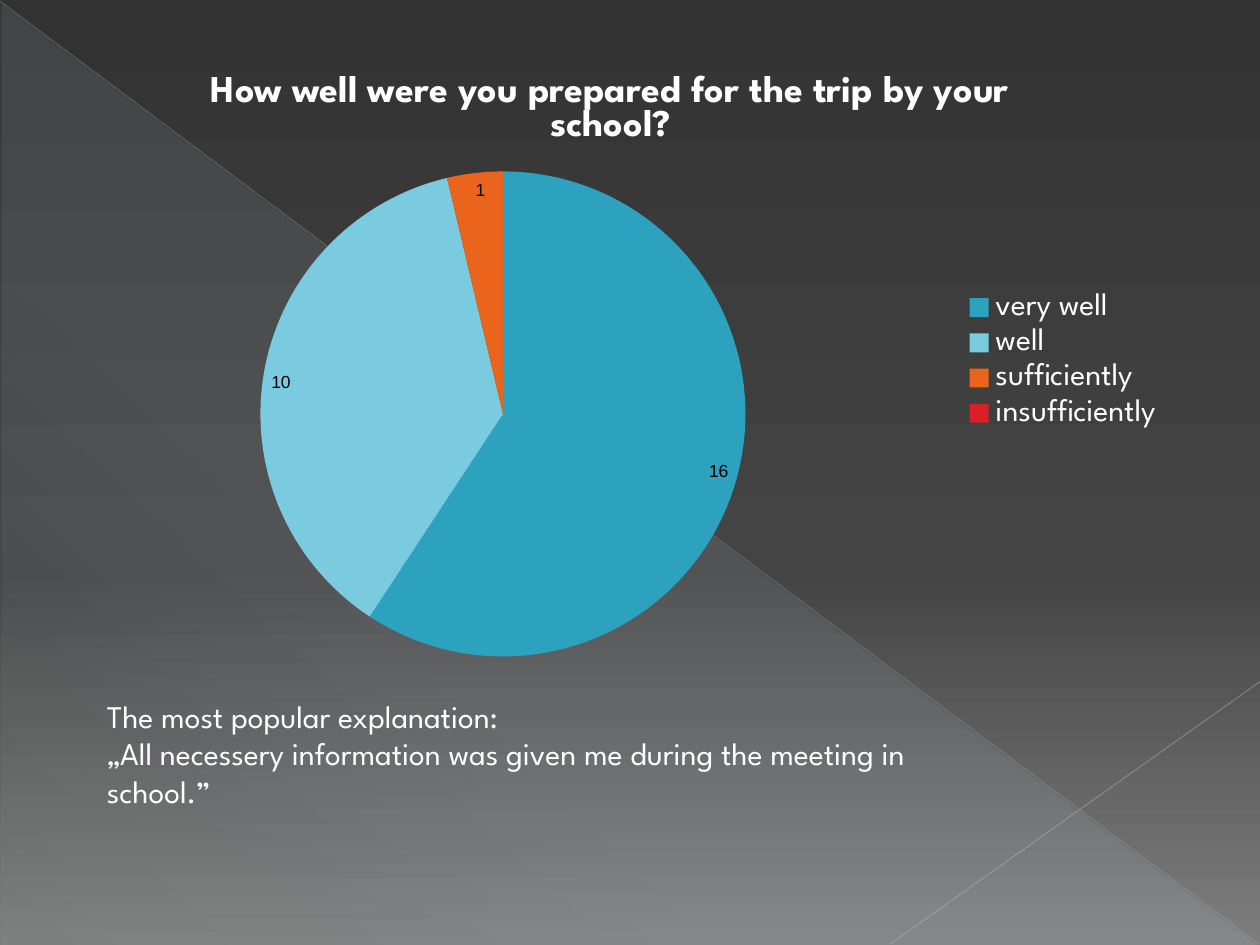
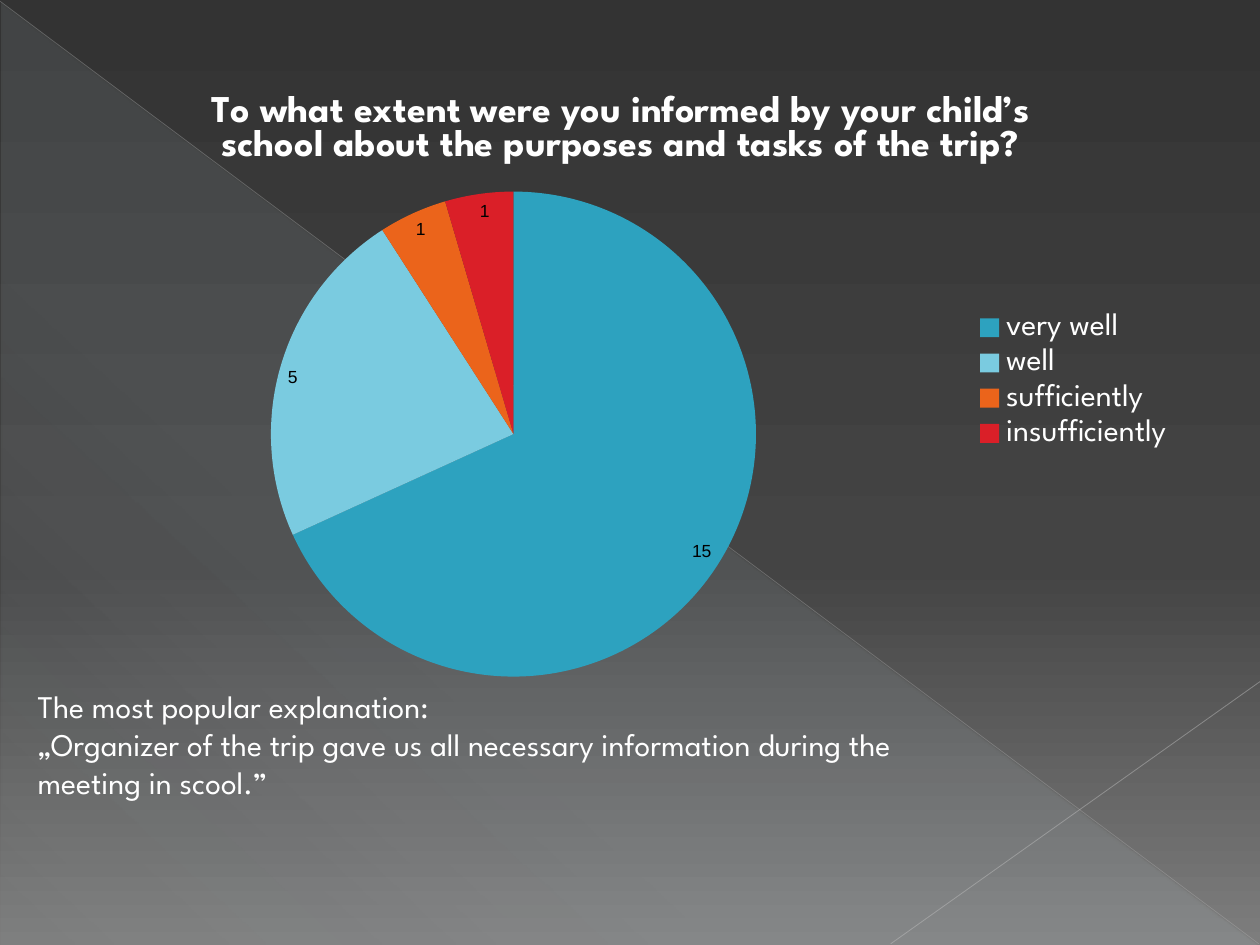
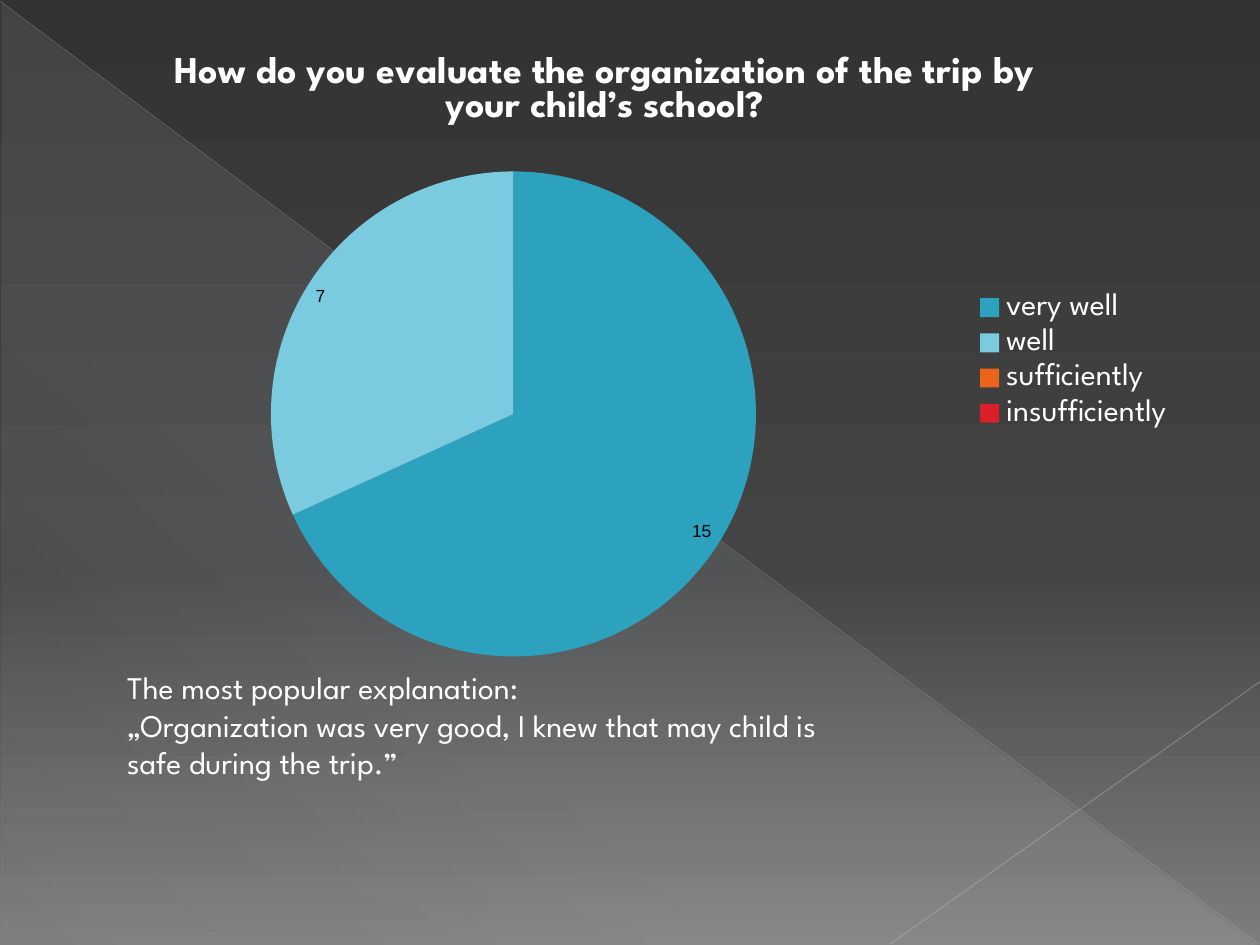
from pptx import Presentation
from pptx.chart.data import CategoryChartData
from pptx.dml.color import RGBColor
from pptx.enum.chart import XL_CHART_TYPE, XL_LABEL_POSITION, XL_LEGEND_POSITION
from pptx.enum.shapes import MSO_CONNECTOR, MSO_SHAPE
from pptx.enum.text import MSO_AUTO_SIZE
from pptx.oxml import parse_xml
from pptx.oxml.ns import nsdecls, qn
from pptx.util import Pt

# Content: chart and note places are in points
ANSWERS = ["very well", "well", "sufficiently", "insufficiently"]
NOTE_HEADING = "The most popular explanation:"
SURVEY = [
    dict(question="How well were you prepared for the trip by your school?",
         votes=[16, 10, 1, 0], chart_at=(25, 26), title_at=None,
         quote="„All necessery information was given me during the meeting in school.”",
         note_box=(54, 394.5, 527, 73)),
    dict(question="To what extent were you informed by your child’s school "
                  "about the purposes and tasks of the trip?",
         votes=[15, 5, 1, 1], chart_at=(31, 37.5), title_at=None,
         quote="„Organizer of the trip gave us all necessary information "
               "during the meeting in scool.”",
         note_box=(14.4, 389, 561.5, 73)),
    dict(question="How do you evaluate the organization of the trip by your child’s school?",
         votes=[15, 7, None, None], chart_at=(31, 26), title_at=(0.1, 0),
         quote="„Organization was very good, I knew that may child is safe during the trip.”",
         note_box=(65.5, 378, 430.5, 73)),
]

# Shared style
WIDTH, HEIGHT = 720, 540
CHART_SIZE = (648, 360)
PIE_AREA = (0.19, 0.2, 0.43, 0.77)
FONT, LABEL_FONT = "League Spartan", "Arial"
WHITE, BLACK = "FFFFFF", "000000"
SLICES = ["2DA2BF", "7ACBE0", "EB641B", "DA1F28"]
BACKDROP = [(0, "333333", 100), (60, "444444", 100), (100, "7D7D7D", 100)]
SHEEN = [(0, "DEF5FA", 10), (70, "DEF5FA", 8), (100, "DEF5FA", 1)]
DIAGONALS = [((0, 0.7), (719.3, 539.3), "B9B9B9", 0.39, 35),
             ((720, 389.5), (509, 539.3), "C1C1C1", 0.47, 45)]


def rgb(color):
    return RGBColor.from_string(color)


def set_font(font, size, color=WHITE, name=FONT, bold=False):
    font.size, font.name, font.bold = Pt(size), name, bold
    font.color.rgb = rgb(color)


def set_gradient(fill, props, stops, angle):
    """Replace the gradient in props by stops of (position, colour, opacity)."""
    fill.gradient()
    gs = "".join(
        f'<a:gs pos="{pos * 1000}"><a:srgbClr val="{color}">'
        f'<a:alpha val="{alpha * 1000}"/></a:srgbClr></a:gs>'
        for pos, color, alpha in stops)
    old = props.find(qn("a:gradFill"))
    props.replace(old, parse_xml(
        f'<a:gradFill {nsdecls("a")} rotWithShape="1"><a:gsLst>{gs}</a:gsLst>'
        f'<a:lin ang="{angle * 60000}" scaled="0"/></a:gradFill>'))


def manual_layout(parent, index, place, inner=False):
    """Place a chart part by fractions of the chart's size."""
    for old in parent.findall(qn("c:layout")):
        parent.remove(old)
    target = '<c:layoutTarget val="inner"/>' if inner else ""
    modes = '<c:xMode val="edge"/><c:yMode val="edge"/>'
    values = "".join(f'<c:{tag} val="{v}"/>' for tag, v in zip("xywh", place))
    parent.insert(index, parse_xml(
        f'<c:layout {nsdecls("c")}><c:manualLayout>{target}{modes}{values}'
        f'</c:manualLayout></c:layout>'))


def add_backdrop(s):
    bg_fill = s.background.fill
    bg_fill.gradient()
    set_gradient(bg_fill, s.element.find(".//" + qn("p:bgPr")), BACKDROP, 90)

    # Translucent triangle
    sp = s.shapes.add_shape(MSO_SHAPE.RIGHT_TRIANGLE, Pt(0.7), Pt(1.4), Pt(718.6), Pt(538.6))
    sp.shadow.inherit = False
    sp.line.fill.background()
    set_gradient(sp.fill, sp.element.spPr, SHEEN, 133)

    # Thin diagonals
    for start, end, color, width, alpha in DIAGONALS:
        line = s.shapes.add_connector(MSO_CONNECTOR.STRAIGHT, *map(Pt, start + end))
        line.line.width = Pt(width)
        line.line.color.rgb = rgb(color)
        sp_pr = line.element.spPr
        sp_pr.find(".//" + qn("a:srgbClr")).append(
            parse_xml(f'<a:alpha {nsdecls("a")} val="{alpha * 1000}"/>'))
        sp_pr.append(parse_xml(f'<a:effectLst {nsdecls("a")}/>'))


def add_pie(s, question, votes, chart_at, title_at):
    data = CategoryChartData()
    data.categories = ANSWERS
    data.add_series(question, votes)
    chart = s.shapes.add_chart(
        XL_CHART_TYPE.PIE, *map(Pt, chart_at + CHART_SIZE), data).chart
    set_font(chart.font, 18)

    # Title
    chart.has_title = True
    tf = chart.chart_title.text_frame
    tf.text = question
    set_font(tf.paragraphs[0].runs[0].font, 21.6, bold=True)
    if title_at:
        manual_layout(chart.chart_title._element, 1, title_at)

    # Legend
    chart.has_legend = True
    chart.legend.position = XL_LEGEND_POSITION.RIGHT
    chart.legend.include_in_layout = False

    # Slices and their values; the number format hides zeros
    plot = chart.plots[0]
    plot.vary_by_categories = True
    manual_layout(chart.element.find(".//" + qn("c:plotArea")), 0, PIE_AREA, inner=True)
    for i, color in enumerate(SLICES):
        fill = plot.series[0].points[i].format.fill
        fill.solid()
        fill.fore_color.rgb = rgb(color)
    plot.has_data_labels = True
    labels = plot.data_labels
    labels.show_value, labels.show_percentage = True, False
    labels.number_format, labels.number_format_is_linked = "0;;;", False
    labels.position = XL_LABEL_POSITION.INSIDE_END
    set_font(labels.font, 10, BLACK, LABEL_FONT)


def add_note(s, quote, box):
    tf = s.shapes.add_textbox(*map(Pt, box)).text_frame
    tf.word_wrap = True
    tf.auto_size = MSO_AUTO_SIZE.SHAPE_TO_FIT_TEXT
    tf.text = f"{NOTE_HEADING}\n{quote}"
    for p in tf.paragraphs:
        set_font(p.runs[0].font, 18)


def main():
    prs = Presentation()
    prs.slide_width, prs.slide_height = Pt(WIDTH), Pt(HEIGHT)
    for item in SURVEY:
        s = prs.slides.add_slide(prs.slide_layouts[6])
        add_backdrop(s)
        add_pie(s, item["question"], item["votes"], item["chart_at"], item["title_at"])
        add_note(s, item["quote"], item["note_box"])
    prs.save("out.pptx")


if __name__ == "__main__":
    main()
